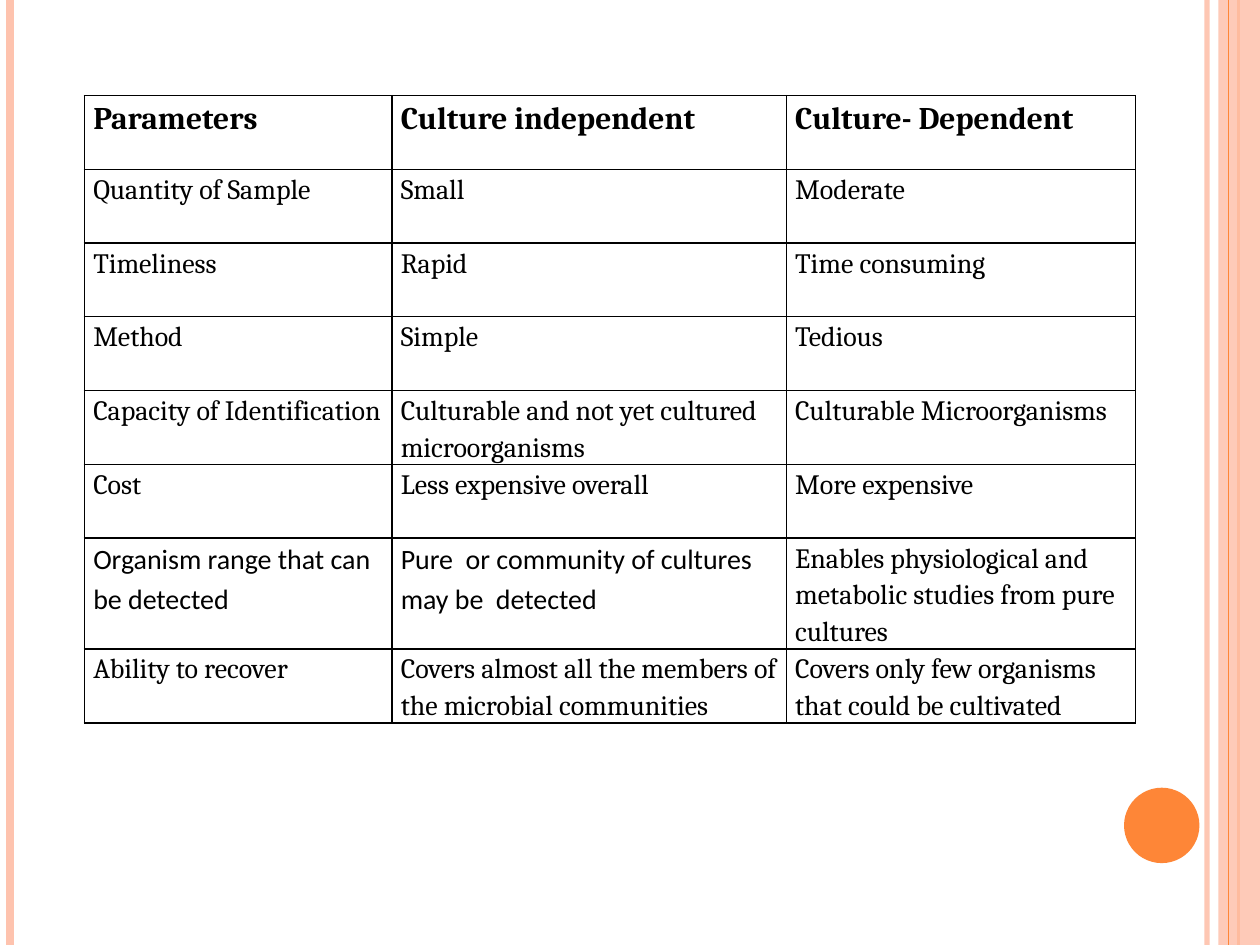
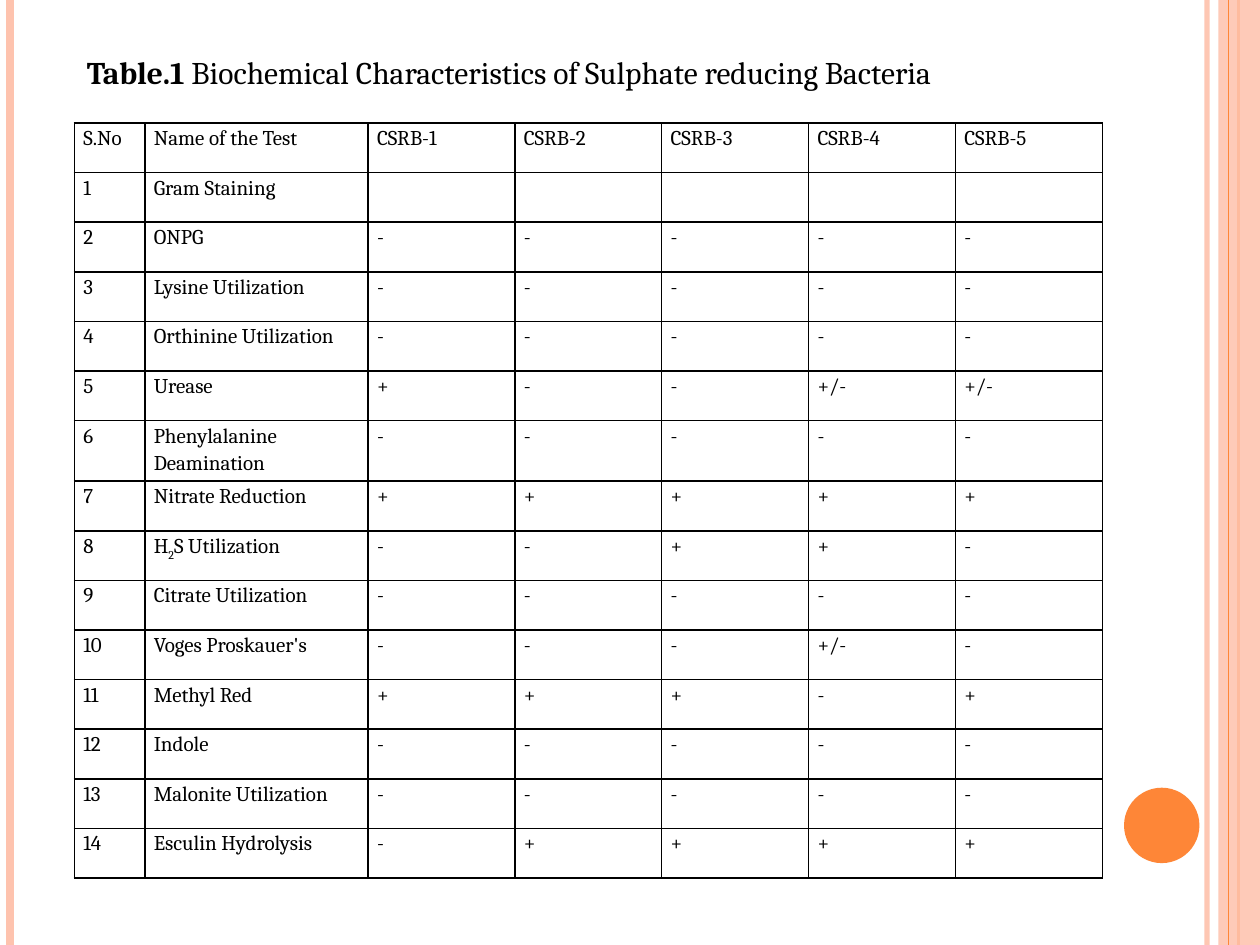
"""Build two slides of tables on culture methods and bacterial tests."""
from lxml.etree import SubElement
from pptx import Presentation
from pptx.dml.color import RGBColor
from pptx.enum.shapes import MSO_CONNECTOR, MSO_SHAPE
from pptx.oxml import parse_xml
from pptx.oxml.ns import nsdecls, qn
from pptx.util import Cm, Pt

BLACK = RGBColor(0x00, 0x00, 0x00)
PEACH = RGBColor(0xFE, 0xC3, 0xAE)
ORANGE = RGBColor(0xFE, 0x86, 0x37)

WIDE, HIGH = 25.4, 19.05
BASE = {"name": "Cambria", "size": Pt(16), "bold": False}
HEAD = BASE | {"size": Pt(18), "bold": True}
PLAIN = BASE | {"name": "Calibri"}
SMALL = BASE | {"size": Pt(12)}
INSET = {"margin_left": Cm(0.18), "margin_right": Cm(0.18),
         "margin_top": 0, "margin_bottom": 0}
RULES = [(24.33, PEACH, 3, 93), (0.2, PEACH, 4.5, 100),
         (24.97, ORANGE, 1.5, 100), (24.77, ORANGE, 0.75, 100)]

METHODS = [
    ("Parameters", "Culture independent", "Culture- Dependent"),
    ("Quantity of Sample", "Small", "Moderate"),
    ("Timeliness", "Rapid", "Time consuming"),
    ("Method", "Simple", "Tedious"),
    ("Capacity of Identification",
     "Culturable and not yet cultured microorganisms",
     "Culturable Microorganisms"),
    ("Cost", "Less expensive overall", "More expensive"),
    ("Organism range that can be detected",
     "Pure  or community of cultures may be  detected",
     "Enables physiological and metabolic studies from pure cultures"),
    ("Ability to recover",
     "Covers almost all the members of the microbial communities",
     "Covers only few organisms that could be cultivated"),
]
TESTS = [
    ("Gram Staining", ""),
    ("ONPG", "- - - - -"),
    ("Lysine Utilization", "- - - - -"),
    ("Orthinine Utilization", "- - - - -"),
    ("Urease", "+ - - +/- +/-"),
    ("Phenylalanine\nDeamination", "- - - - -"),
    ("Nitrate Reduction", "+ + + + +"),
    ("H_2_S Utilization", "- - + + -"),
    ("Citrate Utilization", "- - - - -"),
    ("Voges Proskauer's", "- - - +/- -"),
    ("Methyl Red", "+ + + - +"),
    ("Indole", "- - - - -"),
    ("Malonite Utilization", "- - - - -"),
    ("Esculin Hydrolysis", "- + + + +"),
]


def write(para, text, style):
    for i, part in enumerate(text.split("_")):
        run = para.add_run()
        run.text = part
        for key, val in style.items():
            setattr(run.font, key, val)
        run.font.color.rgb = BLACK
        if i % 2:
            run.font._element.set("baseline", "-25000")


def grid(slide, left, top, cols, tall, rows, style):
    table = slide.shapes.add_table(
        len(rows), len(cols), Cm(left), Cm(top),
        Cm(sum(cols)), Cm(sum(tall))).table
    table.first_row = table.horz_banding = False
    for col, size in zip(table.columns, cols):
        col.width = Cm(size)
    for row, size in zip(table.rows, tall):
        row.height = Cm(size)
    for r, row in enumerate(rows):
        for c, text in enumerate(row):
            cell = table.cell(r, c)
            for key, val in INSET.items():
                setattr(cell, key, val)
            cell.fill.background()
            for i, side in enumerate("LRTB"):
                cell._tc.get_or_add_tcPr().insert(i, parse_xml(
                    f'<a:ln{side} {nsdecls("a")} w="12700"><a:solidFill>'
                    f'<a:srgbClr val="{BLACK}"/></a:solidFill></a:ln{side}>'))
            for i, line in enumerate(text.split("\n")):
                frame = cell.text_frame
                para = frame.add_paragraph() if i else frame.paragraphs[0]
                para.line_spacing = 1.15
                if line:
                    write(para, line, style(r, c))


deck = Presentation()
deck.slide_width, deck.slide_height = Cm(WIDE), Cm(HIGH)
slides = [deck.slides.add_slide(deck.slide_layouts[6]) for _ in range(2)]

for slide in slides:
    shapes = slide.shapes
    for i, (x, color, width, alpha) in enumerate(RULES):
        if i == 3:
            band = shapes.add_shape(
                MSO_SHAPE.RECTANGLE, Cm(24.56), 0, Cm(WIDE - 24.56), Cm(HIGH))
        rule = shapes.add_connector(
            MSO_CONNECTOR.STRAIGHT, Cm(x), 0, Cm(x), Cm(HIGH))
        rule.line.color.rgb = color
        rule.line.width = Pt(width)
        SubElement(rule._element.spPr, qn("a:effectLst"))
        if alpha < 100:
            tint = rule._element.spPr.find(".//" + qn("a:srgbClr"))
            SubElement(tint, qn("a:alpha"), val=str(alpha * 1000))
    disc = shapes.add_shape(
        MSO_SHAPE.OVAL, Cm(22.66), Cm(15.88), Cm(1.52), Cm(1.52))
    for shape, color in ((band, PEACH), (disc, ORANGE)):
        shape.shadow.inherit = False
        shape.fill.solid()
        shape.fill.fore_color.rgb = color
        shape.line.fill.background()
    tint = band._element.spPr.find(".//" + qn("a:srgbClr"))
    SubElement(tint, qn("a:alpha"), val="87000")

first, second = slides
grid(first, 1.7, 1.93, [6.2, 7.95, 7.04], [1.485] * len(METHODS), METHODS,
     lambda r, c: HEAD if r == 0 else PLAIN if r == 6 and c < 2 else BASE)

rows = [["S.No", "Name of the Test"] + [f"CSRB-{n}" for n in range(1, 6)]]
for n, (name, marks) in enumerate(TESTS, 1):
    rows.append([str(n), name] + (marks.split() or [""] * 5))
tall = [1.22 if "\n" in row[1] else 1 for row in rows]
grid(second, 1.5, 2.48, [1.42, 4.5] + [2.96] * 5, tall, rows,
     lambda r, c: SMALL)

title = second.shapes.add_textbox(Cm(1.5), Cm(0.94), Cm(20.8), Cm(1.8))
title.text_frame.word_wrap = True
para = title.text_frame.paragraphs[0]
write(para, "Table.1 ", HEAD)
write(para, "Biochemical Characteristics of Sulphate reducing Bacteria",
      HEAD | {"bold": False})

deck.save("out.pptx")
